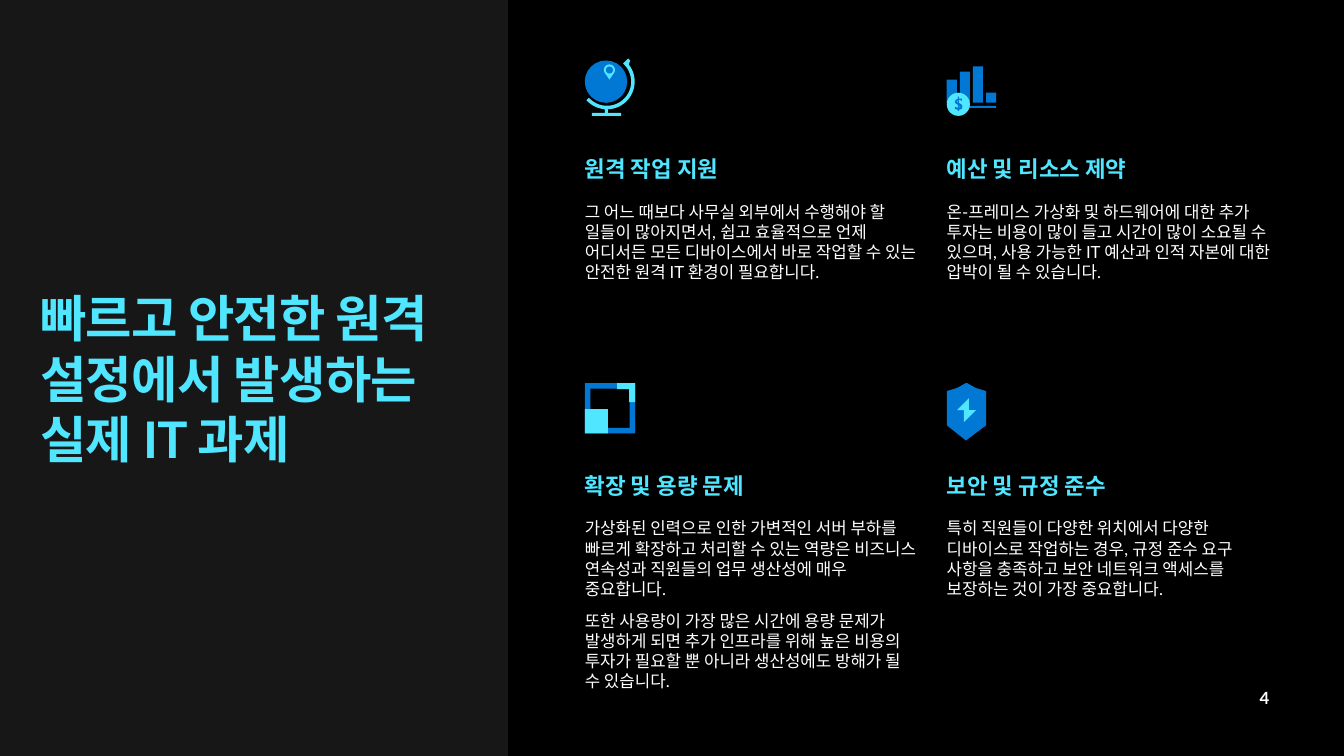
from math import cos, radians, sin

from pptx import Presentation
from pptx.dml.color import RGBColor
from pptx.enum.shapes import MSO_SHAPE as SHAPE
from pptx.enum.text import MSO_ANCHOR as ANCHOR, PP_ALIGN as ALIGN
from pptx.util import Pt

PX = 9144  # 100 px to the inch
BLACK = RGBColor(0x00, 0x00, 0x00)
PANEL = RGBColor(0x17, 0x17, 0x17)
CYAN = RGBColor(0x50, 0xE6, 0xFF)
BLUE = RGBColor(0x00, 0x78, 0xD4)
WHITE = RGBColor(0xFF, 0xFF, 0xFF)

presentation = Presentation()
presentation.slide_width, presentation.slide_height = 1333 * PX, 750 * PX
slide = presentation.slides.add_slide(presentation.slide_layouts[6])
slide.background.fill.solid()
slide.background.fill.fore_color.rgb = BLACK


def add_filled(shapes, color, outline, *box):
    """Draw a preset in a box, or a freeform from a list of contours."""
    if box:
        shape = shapes.add_shape(outline, *(length * PX for length in box))
    else:
        contours = [[(x * PX, y * PX) for x, y in contour] for contour in outline]
        builder = shapes.build_freeform(*contours[0][0], scale=1.0)
        for number, contour in enumerate(contours):
            if number:
                builder.move_to(*contour[0])
            builder.add_line_segments(contour[1:], close=True)
        shape = builder.convert_to_shape()
    shape.shadow.inherit = False
    shape.fill.solid()
    shape.fill.fore_color.rgb = color
    shape.line.fill.background()
    return shape


def add_text(box, paragraphs, size, color, bold=False, anchor=ANCHOR.TOP):
    text_box = slide.shapes.add_textbox(*(length * PX for length in box))
    frame = text_box.text_frame
    frame.word_wrap = True
    frame.vertical_anchor = anchor
    frame.margin_left = frame.margin_right = frame.margin_top = frame.margin_bottom = 0
    for number, text in enumerate(paragraphs):
        paragraph = frame.add_paragraph() if number else frame.paragraphs[0]
        if number:
            paragraph.space_before = Pt(8.4)
        run = paragraph.add_run()
        run.text = text
        run.font.name, run.font.size, run.font.bold = "Lato", Pt(size), bold
        run.font.color.rgb = color
    return frame


# Left panel with the title
add_filled(slide.shapes, PANEL, SHAPE.RECTANGLE, 0, 0, 504, 750)
title = add_text((40, 254, 427, 242), ["빠르고 안전한 원격 설정에서 발생하는 실제 IT 과제"],
                 36, CYAN, True, ANCHOR.MIDDLE)
title.paragraphs[0].runs[0].font._element.set("spc", "-50")

# Four challenges in a two by two grid
LEFTS, HEADING_TOPS, BODY_OFFSET = (580, 939), (154, 468), 46
challenges = [
    ("원격 작업 지원", [
        "그 어느 때보다 사무실 외부에서 수행해야 할 일들이 많아지면서, 쉽고 효율적으로 언제 "
        "어디서든 모든 디바이스에서 바로 작업할 수 있는 안전한 원격 IT 환경이 필요합니다."]),
    ("예산 및 리소스 제약", [
        "온-프레미스 가상화 및 하드웨어에 대한 추가 투자는 비용이 많이 들고 시간이 많이 소요될 수 "
        "있으며, 사용 가능한 IT 예산과 인적 자본에 대한 압박이 될 수 있습니다."]),
    ("확장 및 용량 문제", [
        "가상화된 인력으로 인한 가변적인 서버 부하를 빠르게 확장하고 처리할 수 있는 역량은 "
        "비즈니스 연속성과 직원들의 업무 생산성에 매우 중요합니다.",
        "또한 사용량이 가장 많은 시간에 용량 문제가 발생하게 되면 추가 인프라를 위해 높은 비용의 "
        "투자가 필요할 뿐 아니라 생산성에도 방해가 될 수 있습니다."]),
    ("보안 및 규정 준수", [
        "특히 직원들이 다양한 위치에서 다양한 디바이스로 작업하는 경우, 규정 준수 요구 사항을 "
        "충족하고 보안 네트워크 액세스를 보장하는 것이 가장 중요합니다."]),
]
for number, (heading, body) in enumerate(challenges):
    left, top = LEFTS[number % 2], HEADING_TOPS[number // 2]
    add_text((left, top, 330, 27), [heading], 16, CYAN, True)
    add_text((left, top + BODY_OFFSET, 330, 81 * len(body)), body, 12, WHITE)

# Page number
page_number = add_text((969, 672, 290, 40), ["4"], 12, WHITE, True, ANCHOR.MIDDLE)
page_number.paragraphs[0].alignment = ALIGN.RIGHT

# Globe icon: ball, stand and location pin
globe = slide.slide_layout and slide.shapes.add_group_shape().shapes
add_filled(globe, BLUE, SHAPE.OVAL, 580, 60, 42, 42)
inner, before_stem, after_stem, pin_top = (
    [(x + radius * cos(radians(angle)), y + radius * sin(radians(angle)))
     for angle in range(start, stop, step)]
    for x, y, radius, start, stop, step in (
        (602, 81, 24, -48, 139, 6), (602, 81, 27.5, 138, 95, -6),
        (602, 81, 27.5, 88, -42, -6), (604.5, 69.5, 5.5, 155, 390, 10)))
foot = [(600, 109), (600, 112), (587, 112), (587, 115),
        (616, 115), (616, 112), (603, 112), (603, 109)]
add_filled(globe, CYAN, [[(623, 58), *inner, *before_stem, *foot, *after_stem, (625, 60)]])
add_filled(globe, CYAN, [[*pin_top, (604.5, 79)]])
add_filled(globe, BLUE, SHAPE.OVAL, 601, 66, 7, 7)

# Budget icon: bars, base line and coin
budget = slide.shapes.add_group_shape().shapes
for number, bar_top in enumerate((79, 71, 66, 92)):
    add_filled(budget, BLUE, SHAPE.RECTANGLE, 939 + 13 * number, bar_top, 10, 102 - bar_top)
add_filled(budget, BLUE, SHAPE.RECTANGLE, 947, 105, 41, 2)
add_filled(budget, CYAN, SHAPE.OVAL, 939, 92, 23, 23)
dollar = [(954, 104), (951, 102), (951, 99), (954, 100), (954, 98), (951, 98), (951, 96),
          (950, 96), (950, 98), (948, 99), (947, 101), (948, 103), (950, 104), (950, 107),
          (947, 106), (947, 108), (950, 109), (950, 110), (951, 110), (951, 109),
          (954, 108), (954.5, 106)]
add_filled(budget, BLUE, [dollar, [(950, 102), (949, 101), (950, 99)],
                          [(951, 107), (951, 105), (952, 106)]])

# Scaling icon: frame, small square and corner
scaling = slide.shapes.add_group_shape().shapes
frame_shape = add_filled(scaling, BLUE, SHAPE.FRAME, 580, 380, 50, 50)
frame_shape.adjustments[0] = 0.11
add_filled(scaling, CYAN, SHAPE.RECTANGLE, 580, 406, 23, 24)
add_filled(scaling, CYAN, [[(612, 380), (612, 386), (624, 386),
                            (624, 399), (630, 399), (630, 380)]])

# Security icon: shield and bolt
security = slide.shapes.add_group_shape().shapes
add_filled(security, BLUE, [[(958, 380), (949, 385), (939, 388), (939, 422), (958, 437),
                             (978, 422), (978, 388), (968, 385), (959, 380)]])
add_filled(security, CYAN, [[(968, 407), (961, 407), (961, 395), (949, 407),
                             (956, 407), (956, 419)]])

presentation.save("out.pptx")
